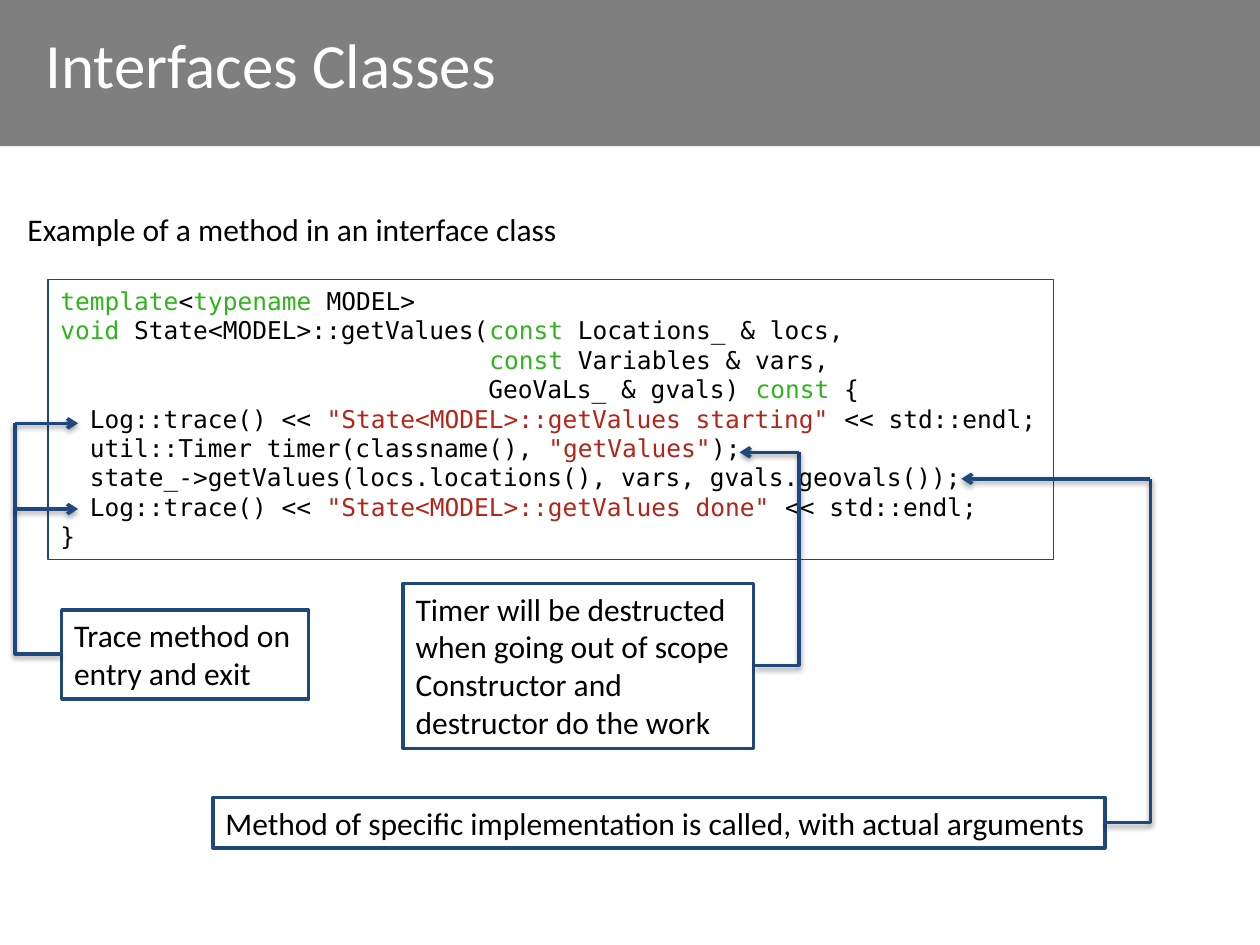
from lxml import etree
from pptx import Presentation
from pptx.dml.color import RGBColor
from pptx.enum.shapes import MSO_CONNECTOR, MSO_SHAPE
from pptx.enum.text import MSO_ANCHOR, MSO_AUTO_SIZE, PP_ALIGN
from pptx.oxml import parse_xml
from pptx.oxml.ns import qn
from pptx.util import Inches, Pt

BLACK, WHITE, NAVY = "000000", "FFFFFF", "1F497D"
GREEN, RED = "2FB41D", "B42419"
SHADOW = (
    '<a:effectLst xmlns:a="http://schemas.openxmlformats.org/drawingml/2006/main">'
    '<a:outerShdw blurRad="40000" dist="20000" dir="5400000" rotWithShape="0">'
    '<a:srgbClr val="000000"><a:alpha val="38000"/></a:srgbClr>'
    '</a:outerShdw></a:effectLst>'
)


def style_font(font, size, color=BLACK, name="Calibri"):
    font.name = name
    font.size = Pt(size)
    font.color.rgb = RGBColor.from_string(color)


def add_line(shapes, start, end, bent=False):
    """Add a shadowed line: a single-corner elbow if bent, otherwise an arrow."""
    kind = MSO_CONNECTOR.ELBOW if bent else MSO_CONNECTOR.STRAIGHT
    connector = shapes.add_connector(kind, *map(Inches, start + end))
    connector.line.color.rgb = RGBColor.from_string(NAVY)
    connector.line.width = Pt(2)
    properties = connector._element.spPr
    if bent:
        properties.find(qn("a:prstGeom")).set("prst", "bentConnector2")
    else:
        etree.SubElement(properties.find(qn("a:ln")), qn("a:tailEnd"), type="arrow")
    properties.append(parse_xml(SHADOW))


presentation = Presentation()
presentation.slide_width = Inches(10)
presentation.slide_height = Inches(7.5)
slide = presentation.slides.add_slide(presentation.slide_layouts[5])

# Header band, behind the title
band = slide.shapes.add_shape(MSO_SHAPE.RECTANGLE, 0, 0, Inches(10), Inches(1.16))
band.shadow.inherit = False
band.fill.solid()
band.fill.fore_color.rgb = RGBColor.from_string(BLACK)
band_color = band._element.spPr.find(qn("a:solidFill"))[0]
etree.SubElement(band_color, qn("a:alpha"), val="50000")
band.line.fill.background()
slide.shapes._spTree.insert(2, band._element)

title = slide.shapes.title
title.left, title.top, title.width, title.height = map(Inches, (0.26, 0, 8.31, 1))
title.text_frame.text = "Interfaces Classes"
title.text_frame.vertical_anchor = MSO_ANCHOR.MIDDLE
title.text_frame.paragraphs[0].alignment = PP_ALIGN.LEFT
style_font(title.text_frame.paragraphs[0].runs[0].font, 36, WHITE)

# Code listing: each line is a list of (text, colour) pieces
indent = " " * 29
code_lines = [
    [("template", GREEN), ("<", BLACK), ("typename", GREEN), (" MODEL>", BLACK)],
    [("void", GREEN), (" State<MODEL>::getValues(", BLACK), ("const", GREEN),
     (" Locations_ & locs,", BLACK)],
    [(indent, BLACK), ("const", GREEN), (" Variables & vars,", BLACK)],
    [(indent + "GeoVaLs_ & gvals) ", BLACK), ("const ", GREEN), ("{", BLACK)],
    [("  Log::trace() << ", BLACK), ('"State<MODEL>::getValues starting"', RED),
     (" << std::endl;", BLACK)],
    [("  util::Timer timer(classname(), ", BLACK), ('"getValues"', RED), (");", BLACK)],
    [("  state_->getValues(locs.locations(), vars, gvals.geovals());", BLACK)],
    [("  Log::trace() << ", BLACK), ('"State<MODEL>::getValues done"', RED),
     (" << std::endl;", BLACK)],
    [("}", BLACK)],
]
code_box = slide.shapes.add_textbox(*map(Inches, (0.38, 2.22, 7.98, 2.22)))
code_box.line.color.rgb = RGBColor.from_string(NAVY)
code_box.line.width = Pt(0.75)
code_frame = code_box.text_frame
code_frame.word_wrap = True
code_frame.auto_size = MSO_AUTO_SIZE.SHAPE_TO_FIT_TEXT
for index, pieces in enumerate(code_lines):
    paragraph = code_frame.add_paragraph() if index else code_frame.paragraphs[0]
    for text, color in pieces:
        run = paragraph.add_run()
        run.text = text
        style_font(run.font, 14, color, "DejaVu Sans Mono")

# Caption without lines, then framed notes: text, box, wrap, elbow, arrows
notes = [
    ("Example of a method in an interface class", (0.12, 1.62, 4.47, 0.4), False,
     None, []),
    ("Trace method on\nentry and exit", (0.49, 4.84, 1.96, 0.71), False,
     ((0.49, 5.19), (0.12, 3.36)),
     [((0.12, 3.36), (0.62, 3.36)), ((0.12, 4.04), (0.62, 4.04))]),
    ("Timer will be destructed\nwhen going out of scope\nConstructor and\n"
     "destructor do the work", (3.2, 4.63, 2.78, 1.31), False,
     ((5.99, 5.28), (6.34, 3.59)), [((6.34, 3.59), (5.87, 3.59))]),
    ("Method of specific implementation is called, with actual arguments",
     (1.69, 6.33, 7.08, 0.4), True,
     ((8.77, 6.53), (9.13, 3.8)), [((9.13, 3.8), (7.63, 3.8))]),
]
for text, box, wrap, elbow, arrows in notes:
    shapes = slide.shapes.add_group_shape().shapes if elbow else slide.shapes
    note = shapes.add_textbox(*map(Inches, box))
    note.text_frame.text = text
    note.text_frame.word_wrap = wrap
    note.text_frame.auto_size = MSO_AUTO_SIZE.SHAPE_TO_FIT_TEXT
    for paragraph in note.text_frame.paragraphs:
        style_font(paragraph.runs[0].font, 18)
    if elbow:
        note.line.color.rgb = RGBColor.from_string(NAVY)
        note.line.width = Pt(2)
        add_line(shapes, *elbow, bent=True)
    for start, end in arrows:
        add_line(shapes, start, end)

presentation.save("out.pptx")
